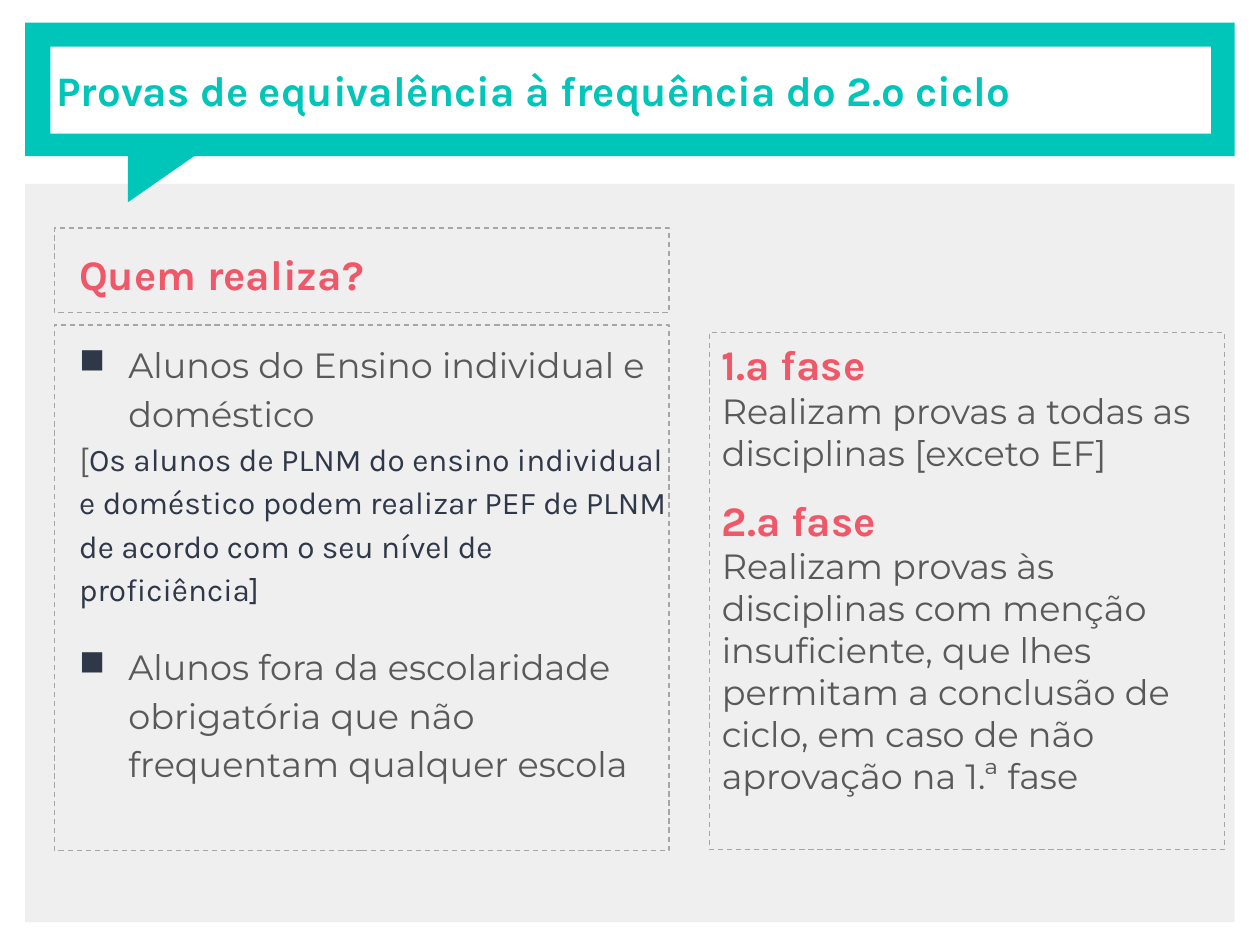
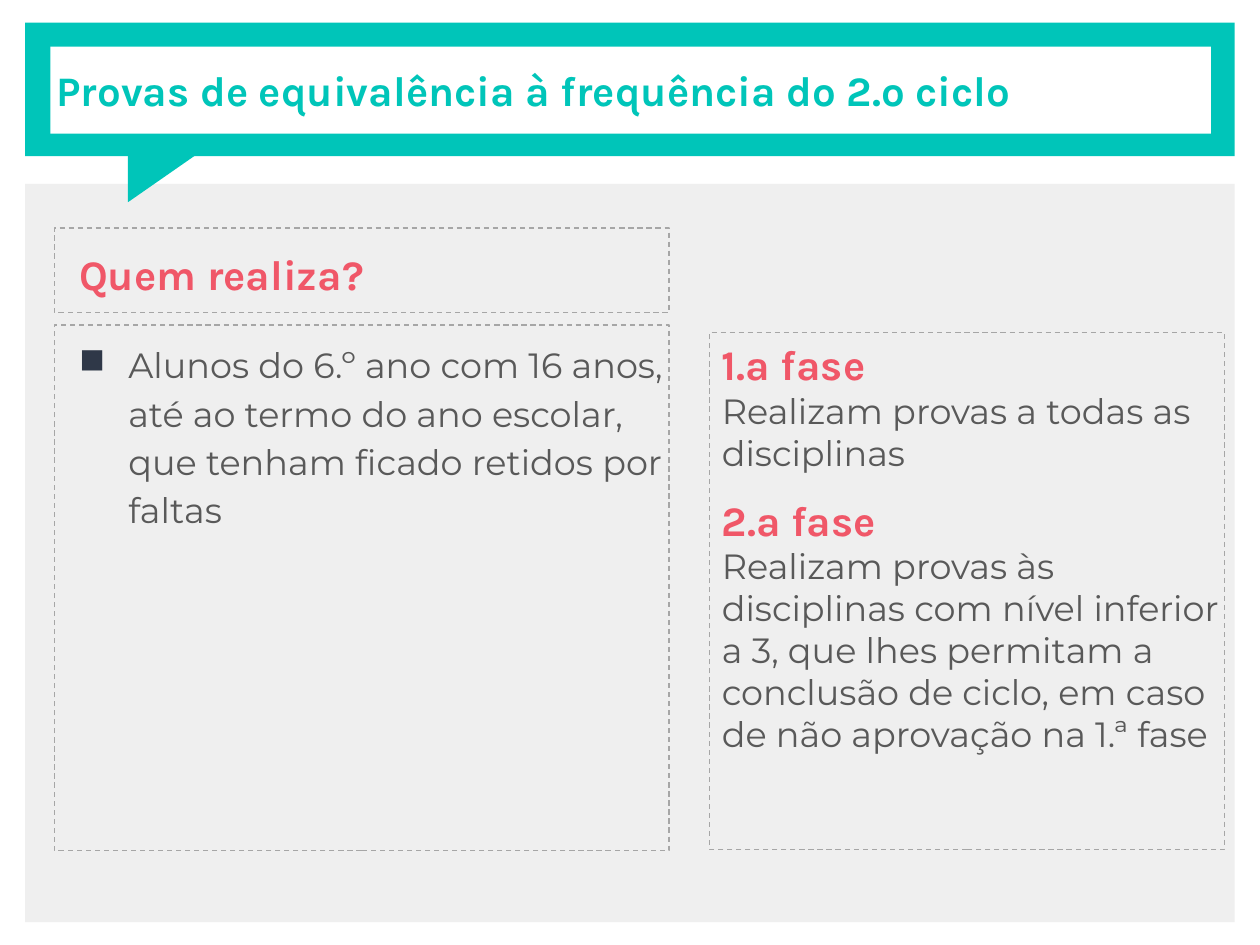
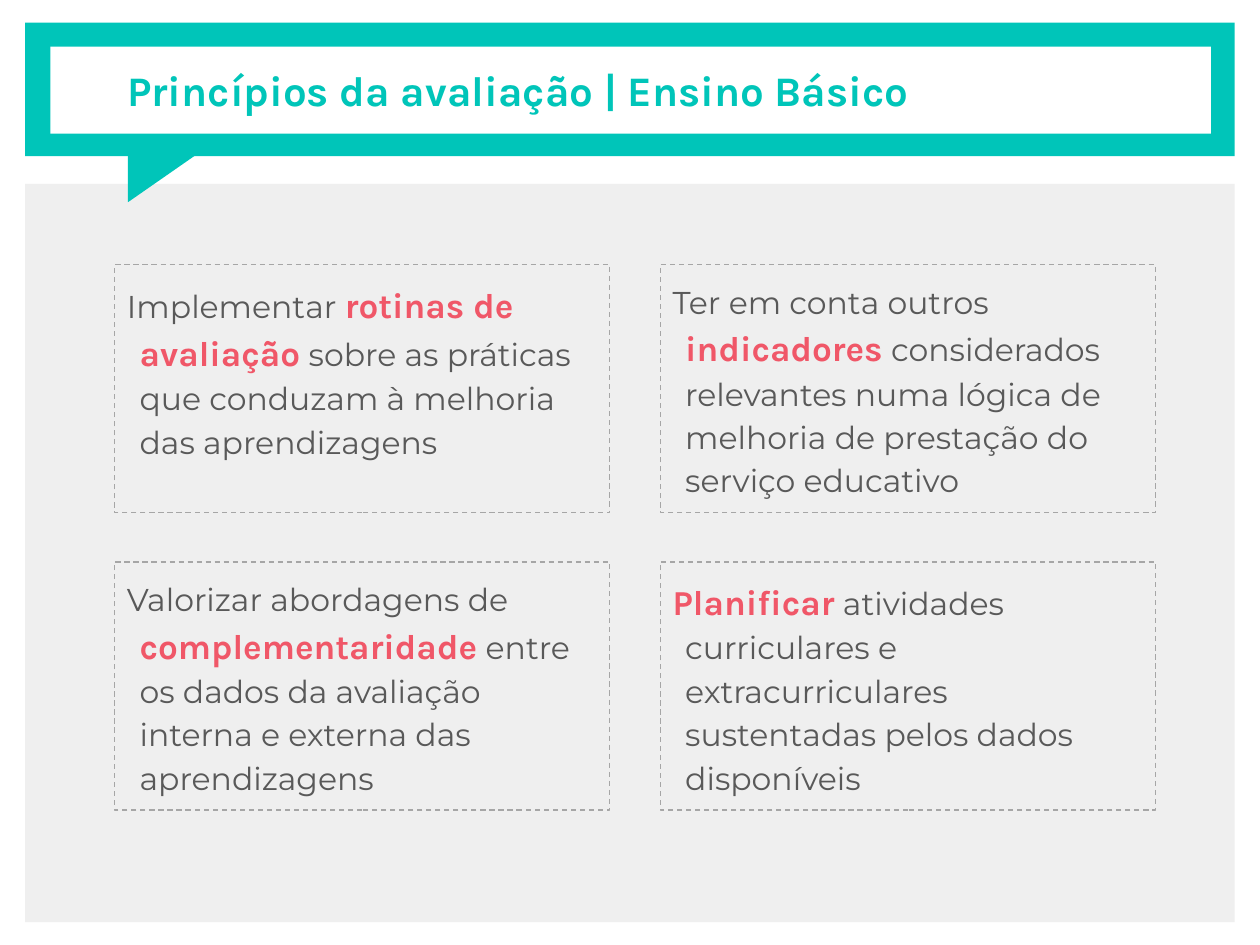
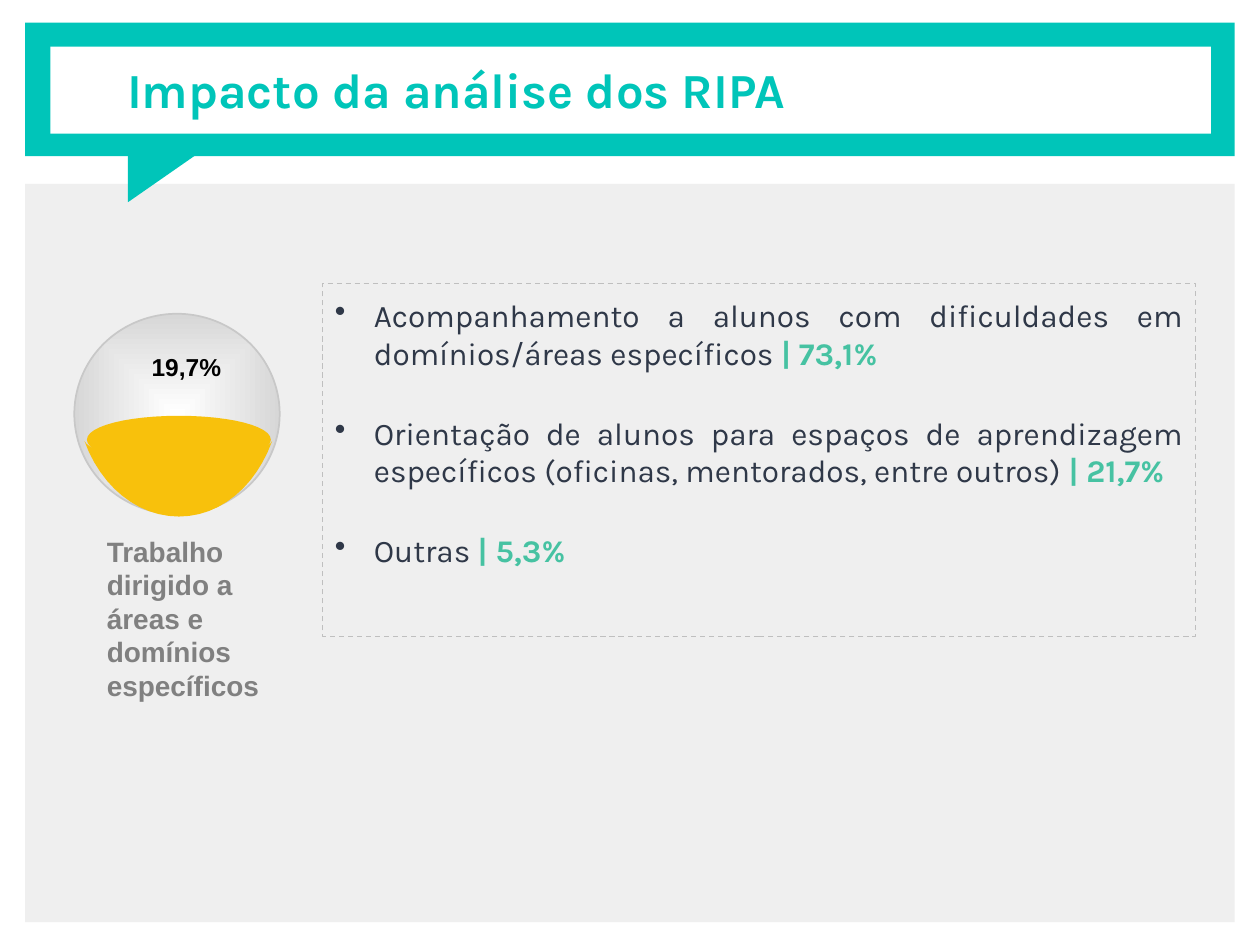
from lxml.etree import SubElement
from pptx import Presentation
from pptx.dml.color import RGBColor
from pptx.enum.dml import MSO_LINE
from pptx.enum.shapes import MSO_SHAPE
from pptx.enum.text import MSO_ANCHOR, PP_ALIGN
from pptx.oxml.ns import qn
from pptx.util import Inches, Pt

TEAL = RGBColor(0x00, 0xC5, 0xB9)
WHITE = RGBColor(0xFF, 0xFF, 0xFF)
BLACK = RGBColor(0x00, 0x00, 0x00)
PALE_GREY = RGBColor(0xEF, 0xEF, 0xEF)
BORDER_GREY = RGBColor(0xA6, 0xA6, 0xA6)
LIGHT_BORDER = RGBColor(0xBF, 0xBF, 0xBF)
TEXT_GREY = RGBColor(0x59, 0x59, 0x59)
CAPTION_GREY = RGBColor(0x80, 0x80, 0x80)
GLASS_EDGE = RGBColor(0xD7, 0xD7, 0xD7)
GLASS_LINE = RGBColor(0xC8, 0xC8, 0xC8)
CORAL = RGBColor(0xF0, 0x57, 0x68)
NAVY = RGBColor(0x2F, 0x38, 0x48)
GREEN = RGBColor(0x46, 0xC2, 0xA2)
AMBER = RGBColor(0xF8, 0xC1, 0x0C)


def style(size, font, color, bold=False):
    return {"size": size, "font": font, "color": color, "bold": bold}


TITLE = style(24, "Karla", TEAL, True)
BIG_TITLE = style(28, "Karla", TEAL, True)
HEADING = style(24, "Karla", CORAL, True)
BODY = style(20, "Montserrat", TEXT_GREY)
SMALL_BODY = style(18, "Montserrat", TEXT_GREY)
KEYWORD = style(20, "Karla", CORAL, True)
NOTE = style(18, "Karla", NAVY)
RATE = style(18, "Karla", GREEN, True)
LEVEL = style(14, "Arial", BLACK, True)
CAPTION = style(16, "Arial", CAPTION_GREY, True)

SQUARE_ITEM = {"left": 0.49, "hanging": 0.39, "bullet": "■", "spacing": 1.15, "before": 6}
DOT_ITEM = {"left": 0.31, "hanging": 0.31, "bullet": "•", "before": 6, "after": 18,
            "align": PP_ALIGN.JUSTIFY}


def write(frame, *segments, left=0, hanging=0, bullet=None, spacing=None,
          before=0, after=0, align=PP_ALIGN.LEFT):
    paragraph = frame.paragraphs[-1]
    if paragraph.runs:
        paragraph = frame.add_paragraph()
    paragraph.alignment = align
    paragraph.space_before = Pt(before)
    paragraph.space_after = Pt(after)
    if spacing:
        paragraph.line_spacing = spacing
    properties = paragraph._p.get_or_add_pPr()
    properties.set("marL", str(Inches(left)))
    properties.set("indent", str(-Inches(hanging)))
    if bullet:
        bullet_color = SubElement(properties, qn("a:buClr"))
        SubElement(bullet_color, qn("a:srgbClr")).set("val", str(NAVY))
        SubElement(properties, qn("a:buChar")).set("char", bullet)
    for text, look in segments:
        run = paragraph.add_run()
        run.text = text
        run.font.size = Pt(look["size"])
        run.font.name = look["font"]
        run.font.bold = look["bold"]
        run.font.color.rgb = look["color"]


def set_frame(shape, insets, anchor=MSO_ANCHOR.TOP, wrap=True):
    frame = shape.text_frame
    frame.word_wrap = wrap
    frame.vertical_anchor = anchor
    frame.margin_left, frame.margin_top, frame.margin_right, frame.margin_bottom = map(Inches, insets)
    return frame


def add_text_box(slide, box, insets, **options):
    return set_frame(slide.shapes.add_textbox(*map(Inches, box)), insets, **options)


def paint(shape, color):
    shape.shadow.inherit = False
    shape.fill.solid()
    shape.fill.fore_color.rgb = color
    shape.line.fill.background()
    return shape


def add_block(slide, box, color, kind=MSO_SHAPE.RECTANGLE):
    return paint(slide.shapes.add_shape(kind, *map(Inches, box)), color)


def add_panel(slide, box, insets=(0.1, 0.1, 0.1, 0.1), border=BORDER_GREY):
    panel = slide.shapes.add_shape(MSO_SHAPE.RECTANGLE, *map(Inches, box))
    panel.shadow.inherit = False
    panel.fill.background()
    panel.line.color.rgb = border
    panel.line.width = Pt(0.75)
    panel.line.dash_style = MSO_LINE.DASH
    return set_frame(panel, insets)


def add_base(presentation, title, title_left=0.91, look=TITLE):
    slide = presentation.slides.add_slide(presentation.slide_layouts[6])
    add_block(slide, (0.2, 1.46, 9.6, 5.86), PALE_GREY)
    add_block(slide, (0.2, 0.18, 9.6, 1.06), TEAL)
    add_block(slide, (1.12, 1.02, 0.48, 0.69), TEAL, MSO_SHAPE.RIGHT_TRIANGLE).rotation = 90
    add_block(slide, (0.4, 0.37, 9.21, 0.69), WHITE)
    frame = add_text_box(slide, (title_left, 0.18, 9.6 - title_left, 1.06),
                         (0.1, 0.1, 0.1, 0.1), anchor=MSO_ANCHOR.MIDDLE)
    write(frame, (title, look))
    return slide


def add_candidates(slide, box, items):
    left, top, width, height = box
    heading = add_panel(slide, (left, top, width, 0.67), (0.1, 0.1, 0, 0.1))
    write(heading, ("Quem realiza?", HEADING), left=0.1, spacing=1.15)
    candidates = add_panel(slide, (left, top + 0.77, width, height - 0.77), (0.1, 0.1, 0, 0.1))
    for segments, layout in items:
        write(candidates, *segments, **layout)


def add_phases(slide, box, first, second):
    phases = add_panel(slide, box, (0.1, 0.05, 0, 0.05))
    for name, rule, after in (("1.ª fase", first, 12), ("2.ª fase", second, 0)):
        write(phases, (name, HEADING))
        write(phases, (rule, BODY), after=after)


def add_exam_slide(presentation, items, first, second):
    slide = add_base(presentation, "Provas de equivalência à frequência do 2.º ciclo", 0.35)
    add_candidates(slide, (0.43, 1.81, 4.88, 4.94), items)
    add_phases(slide, (5.63, 2.64, 4.09, 4.1), first, second)


def add_principles_slide(presentation, principles):
    slide = add_base(presentation, "Princípios da avaliação | Ensino Básico")
    for index, segments in enumerate(principles):
        row, column = divmod(index, 2)
        box = (0.91 + 4.33 * column, 2.1 + 2.36 * row, 3.93, 1.97)
        write(add_panel(slide, box), *segments, left=0.1, hanging=0.1, spacing=1.15, after=12)


def curve_points(start, curves, steps=12):
    points = [start]
    for control_a, control_b, end in curves:
        origin = points[-1]
        for step in range(1, steps + 1):
            t = step / steps
            weights = ((1 - t) ** 3, 3 * t * (1 - t) ** 2, 3 * t ** 2 * (1 - t), t ** 3)
            corners = (origin, control_a, control_b, end)
            points.append(tuple(sum(w * corner[axis] for w, corner in zip(weights, corners))
                                for axis in (0, 1)))
    return points


def add_outline(slide, left, top, start, curves, color):
    points = [(Inches(left + x), Inches(top + y)) for x, y in curve_points(start, curves)]
    builder = slide.shapes.build_freeform(*points[0])
    builder.add_line_segments(points[1:], close=True)
    paint(builder.convert_to_shape(), color)


def add_gauge(slide, box, level, caption):
    left, top, width, height = box
    glass = add_block(slide, box, WHITE, MSO_SHAPE.OVAL)
    glass.fill.gradient()
    for stop, color in zip(glass.fill.gradient_stops, (WHITE, GLASS_EDGE)):
        stop.color.rgb = color
    gradient = glass._element.spPr.find(qn("a:gradFill"))
    gradient.remove(gradient.find(qn("a:lin")))
    spread = SubElement(gradient, qn("a:path"))
    spread.set("path", "shape")
    center = SubElement(spread, qn("a:fillToRect"))
    for side in "ltrb":
        center.set(side, "50000")
    glass.line.color.rgb = GLASS_LINE
    glass.line.width = Pt(1)

    add_outline(slide, left + 0.08, top + 1.01, (0.75, 0.15), [
        ((0.36, 0.15), (0.04, 0.09), (0, 0)),
        ((0.13, 0.36), (0.42, 0.6), (0.75, 0.6)),
        ((1.08, 0.6), (1.36, 0.36), (1.49, 0)),
        ((1.45, 0.09), (1.13, 0.15), (0.75, 0.15)),
    ], AMBER)
    add_outline(slide, left + 0.1, top + 0.81, (1.46, 0.19), [
        ((1.46, 0.08), (1.13, 0), (0.73, 0)),
        ((0.33, 0), (0, 0.08), (0, 0.19)),
        ((0, 0.3), (0.33, 0.38), (0.73, 0.38)),
        ((1.13, 0.38), (1.46, 0.3), (1.46, 0.19)),
    ], AMBER)

    level_frame = add_text_box(slide, (left + 0.61, top + 0.32, 0.56, 0.22), (0, 0, 0, 0), wrap=False)
    write(level_frame, (level, LEVEL), spacing=0.95, after=8, align=PP_ALIGN.CENTER)
    caption_frame = add_text_box(slide, (left + 0.16, top + height + 0.1, 1.53, 1.45),
                                 (0.1, 0.05, 0.1, 0.05), anchor=MSO_ANCHOR.MIDDLE)
    write(caption_frame, (caption, CAPTION))


def add_impact_slide(presentation, actions):
    slide = add_base(presentation, "Impacto da análise dos RIPA", look=BIG_TITLE)
    panel = add_panel(slide, (2.56, 2.25, 6.93, 2.8), border=LIGHT_BORDER)
    for action, rate in actions:
        write(panel, (action + " ", NOTE), ("| " + rate, RATE), **DOT_ITEM)
    add_gauge(slide, (0.59, 2.49, 1.63, 1.59), "19,7%",
              "Trabalho dirigido a áreas e domínios específicos")


def main():
    presentation = Presentation()
    presentation.slide_width = Inches(10)
    presentation.slide_height = Inches(7.5)
    add_exam_slide(
        presentation,
        [
            ([("Alunos do Ensino individual e doméstico", BODY)], SQUARE_ITEM),
            ([("[", SMALL_BODY),
              ("Os alunos de PLNM do ensino individual e doméstico podem realizar PEF de PLNM "
               "de acordo com o seu nível de proficiência]", NOTE)],
             {"left": 0.1, "spacing": 1.15, "after": 12}),
            ([("Alunos fora da escolaridade obrigatória que não frequentam qualquer escola", BODY)],
             {**SQUARE_ITEM, "after": 12}),
        ],
        "Realizam provas a todas as disciplinas [exceto EF]",
        "Realizam provas às disciplinas com menção insuficiente, que lhes permitam a conclusão "
        "de ciclo, em caso de não aprovação na 1.ª fase",
    )
    add_exam_slide(
        presentation,
        [([("Alunos do 6.º ano com 16 anos, até ao termo do ano escolar, que tenham ficado "
            "retidos por faltas", BODY)], {**SQUARE_ITEM, "after": 12})],
        "Realizam provas a todas as disciplinas",
        "Realizam provas às disciplinas com nível inferior a 3, que lhes permitam a conclusão "
        "de ciclo, em caso de não aprovação na 1.ª fase",
    )
    add_principles_slide(presentation, [
        [("Implementar ", SMALL_BODY), ("rotinas de avaliação", KEYWORD),
         (" sobre as práticas que conduzam à melhoria das aprendizagens", SMALL_BODY)],
        [("Ter em conta outros ", SMALL_BODY), ("indicadores", KEYWORD),
         (" considerados relevantes numa lógica de melhoria de prestação do serviço educativo",
          SMALL_BODY)],
        [("Valorizar abordagens de ", SMALL_BODY), ("complementaridade", KEYWORD),
         (" entre os dados da avaliação interna e externa das aprendizagens", SMALL_BODY)],
        [("Planificar", KEYWORD),
         (" atividades curriculares e extracurriculares sustentadas pelos dados disponíveis",
          SMALL_BODY)],
    ])
    add_impact_slide(presentation, [
        ("Acompanhamento a alunos com dificuldades em domínios/áreas específicos", "73,1%"),
        ("Orientação de alunos para espaços de aprendizagem específicos "
         "(oficinas, mentorados, entre outros)", "21,7%"),
        ("Outras", "5,3%"),
    ])
    presentation.save("out.pptx")


if __name__ == "__main__":
    main()
